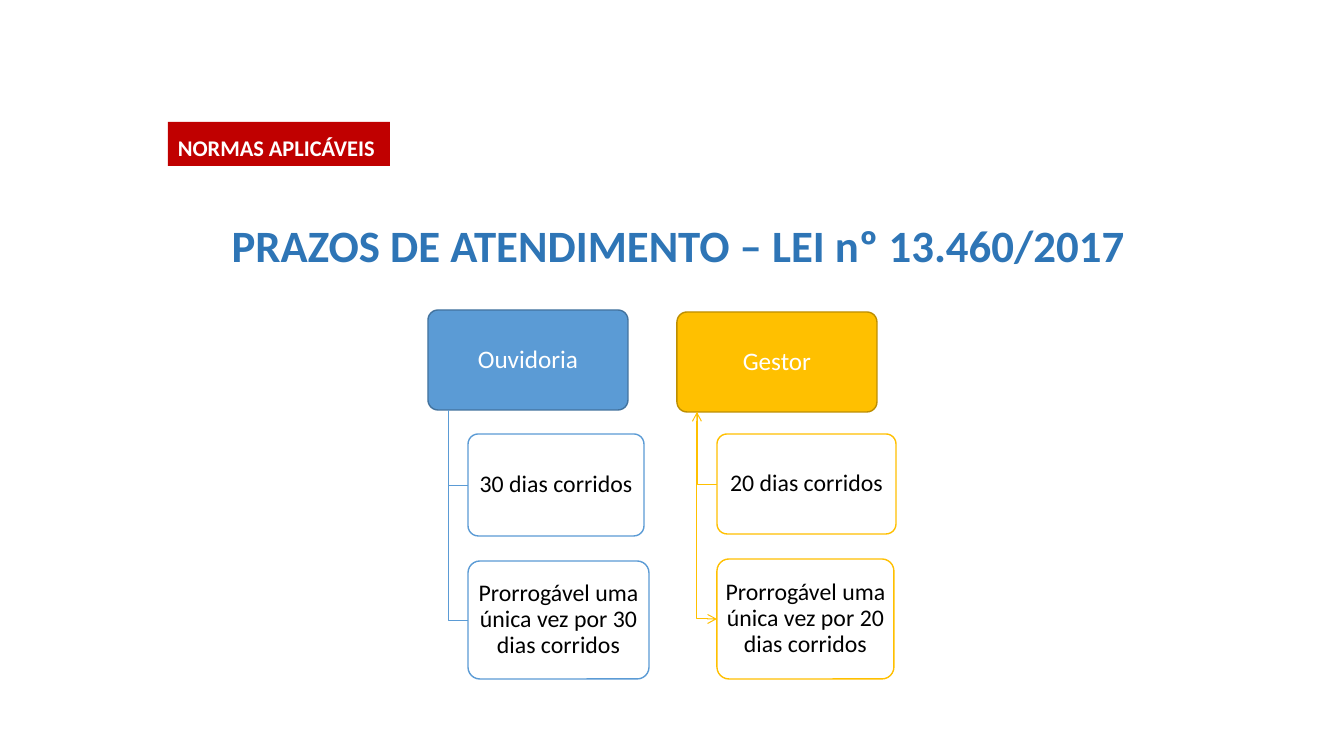
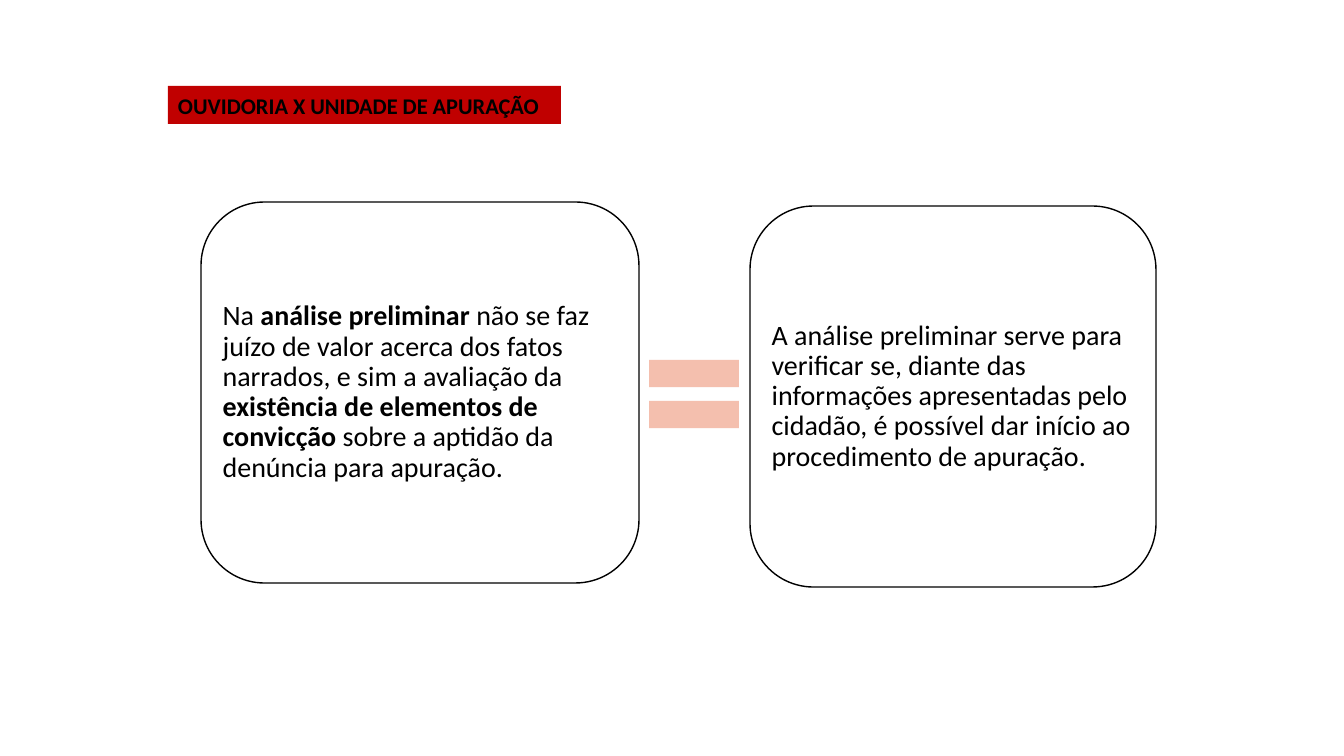
from dataclasses import dataclass

from lxml import etree
from pptx import Presentation
from pptx import util as u
from pptx.dml.color import RGBColor
from pptx.enum import shapes, text
from pptx.oxml.ns import qn

EMU_PER_PX = 914400 / 100.8


@dataclass(frozen=True)
class Theme:
    font: str = "Calibri"
    white: str = "FFFFFF"
    black: str = "000000"
    red: str = "C00000"
    title_blue: str = "2E75B6"
    blue: str = "5B9BD5"
    dark_blue: str = "43739E"
    gold: str = "FFC000"
    dark_gold: str = "BD8E00"
    salmon: str = "F4BFAE"
    title_size: int = 32
    body_size: int = 20
    header_size: int = 18
    item_size: int = 17
    label_size: int = 16


theme = Theme()


def px(*lengths):
    return [u.Emu(round(length * EMU_PER_PX)) for length in lengths]


def add_box(slide, bounds, content="", kind=shapes.MSO_SHAPE.ROUNDED_RECTANGLE,
            fill=None, line=None, radius=None, size=theme.body_size,
            color=theme.black, bold=False, align=text.PP_ALIGN.LEFT,
            anchor=text.MSO_ANCHOR.MIDDLE, spacing=0.9, margins=(4, 2)):
    """Content is a string or a list of (text, bold) runs; margins are side and top/bottom."""
    shape = slide.shapes.add_shape(kind, *px(*bounds))
    shape.shadow.inherit = False
    if radius is not None:
        shape.adjustments[0] = radius
    if fill:
        shape.fill.solid()
        shape.fill.fore_color.rgb = RGBColor.from_string(fill)
    else:
        shape.fill.background()
    if line:
        shape.line.color.rgb = RGBColor.from_string(line)
        shape.line.width = u.Pt(1)
    else:
        shape.line.fill.background()
    if not content:
        return

    frame = shape.text_frame
    frame.word_wrap = True
    frame.vertical_anchor = anchor
    side, end = px(*margins)
    frame.margin_left = frame.margin_right = side
    frame.margin_top = frame.margin_bottom = end
    paragraph = frame.paragraphs[0]
    paragraph.alignment = align
    paragraph.line_spacing = spacing
    runs = [(content, bold)] if isinstance(content, str) else content
    for words, is_bold in runs:
        run = paragraph.add_run()
        run.text = words
        run.font.name = theme.font
        run.font.size = u.Pt(size)
        run.font.bold = is_bold
        run.font.color.rgb = RGBColor.from_string(color)


presentation = Presentation()
presentation.slide_width, presentation.slide_height = px(1344, 756)
deadlines, analysis = [
    presentation.slides.add_slide(presentation.slide_layouts[6]) for _ in range(2)
]

# Section labels
for slide, top, width, height, label, color in [
    (deadlines, 122, 222, 44, "NORMAS APLICÁVEIS", theme.white),
    (analysis, 86, 393, 38, "OUVIDORIA X UNIDADE DE APURAÇÃO", theme.black),
]:
    add_box(slide, (168, top, width, height), label, shapes.MSO_SHAPE.RECTANGLE,
            fill=theme.red, size=theme.label_size, color=color, bold=True,
            anchor=text.MSO_ANCHOR.BOTTOM, spacing=1.0, margins=(10, 5))

# Slide 1: deadlines
add_box(deadlines, (216, 186, 925, 84), "PRAZOS DE ATENDIMENTO – LEI nº 13.460/2017",
        shapes.MSO_SHAPE.RECTANGLE, size=theme.title_size, color=theme.title_blue,
        bold=True, align=text.PP_ALIGN.CENTER, anchor=text.MSO_ANCHOR.TOP,
        spacing=1.5, margins=(10, 5))

INDENT = 20
HEADER_WIDTH, HEADER_HEIGHT = 200, 100
# Each item: text, top, width, height, connector weight, arrowheads
branches = [
    ("Ouvidoria", 428, 310, theme.blue, theme.dark_blue, [
        ("30 dias corridos", 434, 176, 102, 0.5, False),
        ("Prorrogável uma única vez por 30 dias corridos", 561, 181, 118, 0.5, False),
    ]),
    ("Gestor", 677, 312, theme.gold, theme.dark_gold, [
        ("20 dias corridos", 434, 179, 100, 0.5, False),
        ("Prorrogável uma única vez por 20 dias corridos", 559, 177, 120, 0.75, True),
    ]),
]
for header, left, header_top, color, outline, items in branches:
    add_box(deadlines, (left, header_top, HEADER_WIDTH, HEADER_HEIGHT), header,
            fill=color, line=outline, radius=0.1, size=theme.header_size,
            color=theme.white, align=text.PP_ALIGN.CENTER)
    stem_x, item_x = left + INDENT, left + 2 * INDENT
    stem_top = header_top + HEADER_HEIGHT
    for words, top, width, height, weight, arrows in items:
        middle = top + height / 2
        builder = deadlines.shapes.build_freeform(*px(stem_x, stem_top))
        builder.add_line_segments([px(stem_x, middle), px(item_x, middle)], close=False)
        elbow = builder.convert_to_shape()
        elbow.shadow.inherit = False
        elbow.fill.background()
        elbow.line.color.rgb = RGBColor.from_string(color)
        elbow.line.width = u.Pt(weight)
        if arrows:
            outline_xml = elbow.element.spPr.find(qn("a:ln"))
            for end in ("a:headEnd", "a:tailEnd"):
                etree.SubElement(outline_xml, qn(end), type="arrow")
        add_box(deadlines, (item_x, top, width, height), words, fill=theme.white,
                line=color, radius=0.1, size=theme.item_size,
                align=text.PP_ALIGN.CENTER)

# Slide 2: preliminary analysis
preliminary = [
    ("Na ", False),
    ("análise preliminar ", True),
    ("não se faz juízo de valor acerca dos fatos narrados, e sim a avaliação da ", False),
    ("existência de elementos de convicção ", True),
    ("sobre a aptidão da denúncia para apuração.", False),
]
purpose = (
    "A análise preliminar serve para verificar se, diante das informações "
    "apresentadas pelo cidadão, é possível dar início ao procedimento de apuração."
)
add_box(analysis, (633, 336, 122, 116), kind=shapes.MSO_SHAPE.MATH_EQUAL, fill=theme.salmon)
for bounds, content in [
    ((201, 202, 438, 381), preliminary),
    ((750, 206, 406, 381), purpose),
]:
    add_box(analysis, bounds, content, fill=theme.white, line=theme.black, margins=(3, 3))

presentation.save("out.pptx")
